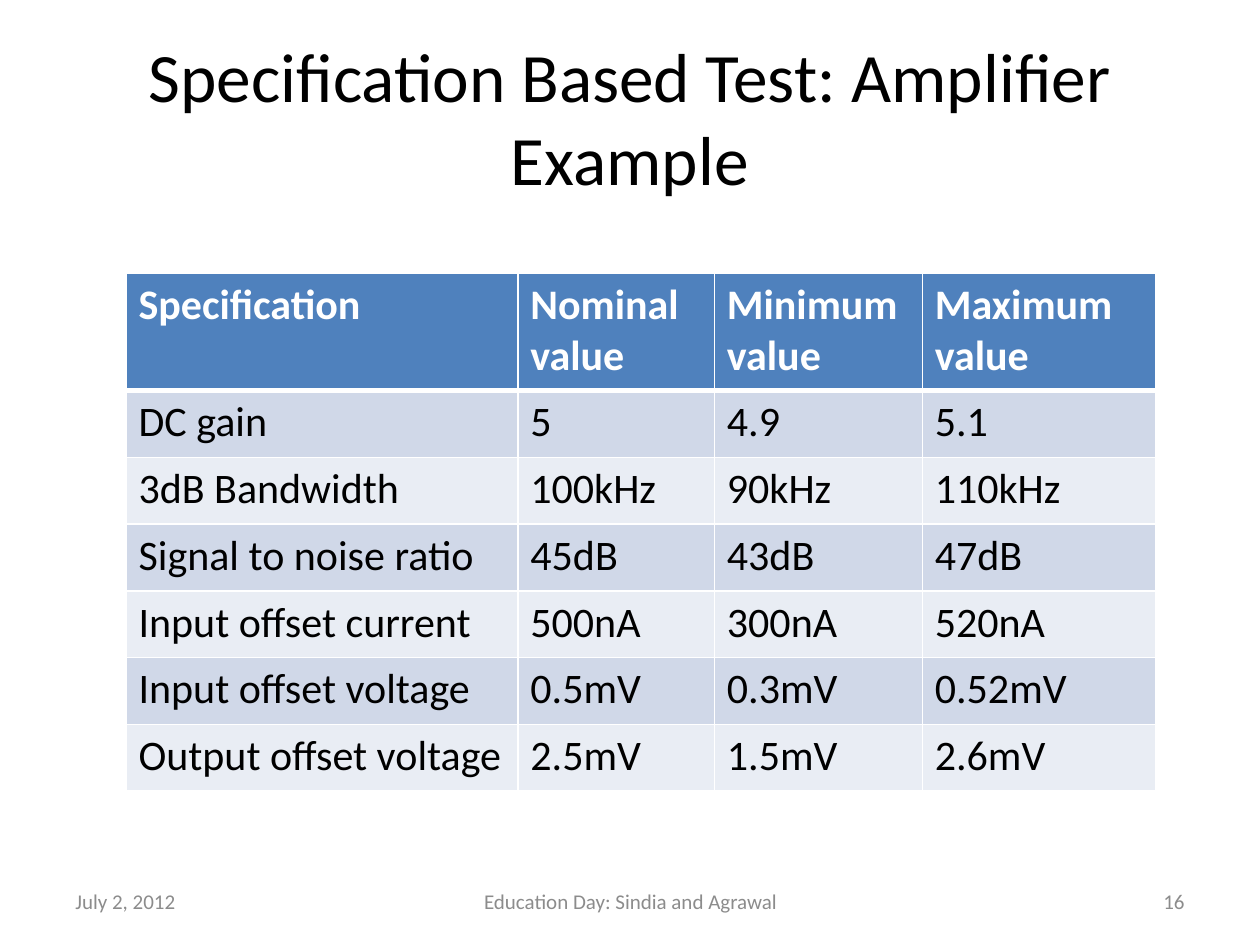
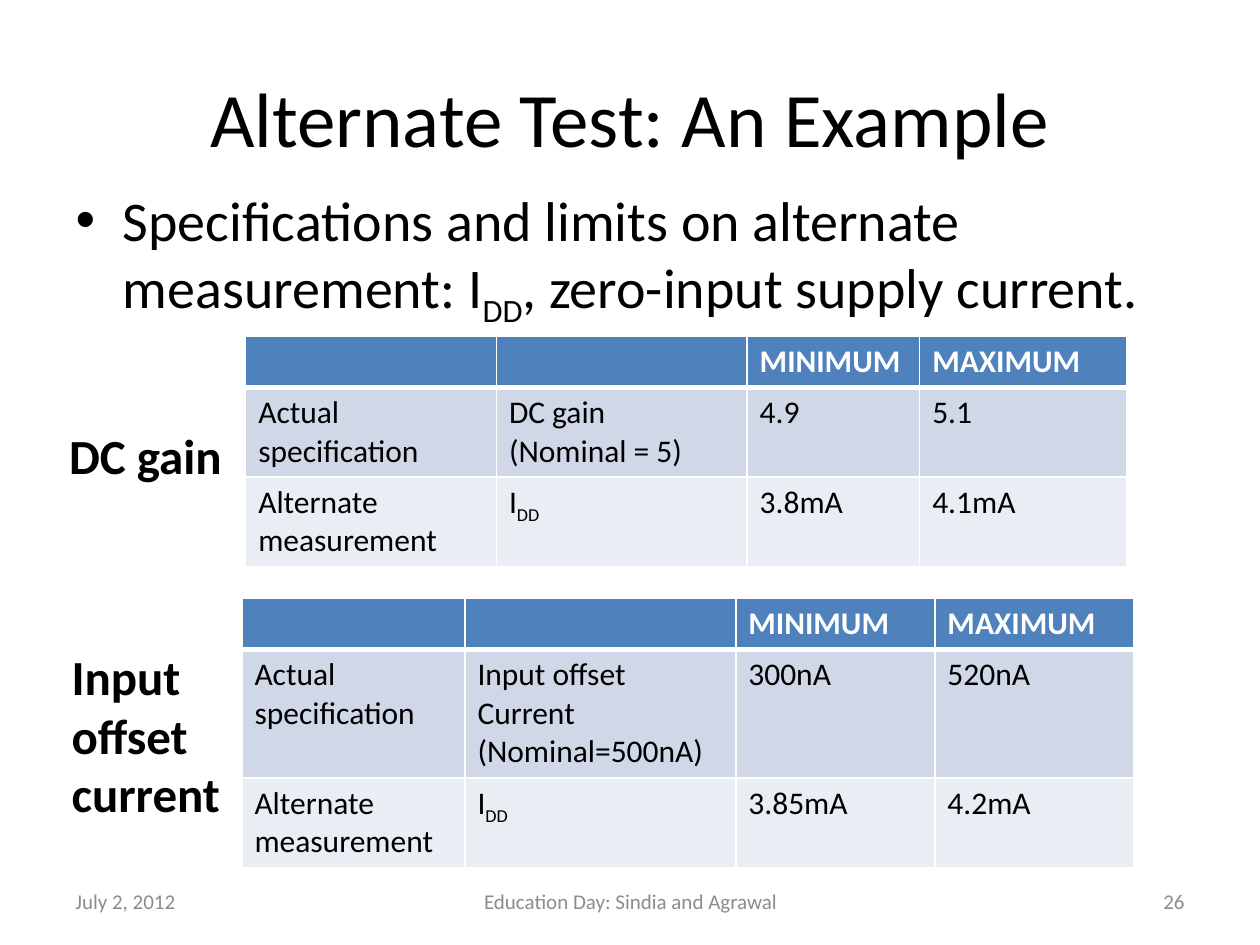
from lxml import etree
from pptx import Presentation
from pptx.dml.color import RGBColor
from pptx.enum import text
from pptx.oxml.ns import qn
from pptx.util import Inches, Pt

FONT = "Calibri"
COLORS = {
    "ink": "000000",
    "paper": "FFFFFF",
    "footer": "8C8C8C",
    "header": "4F81BD",
    "bands": ("D0D8E8", "E9EDF4"),
}
LEFT, CENTER, RIGHT = text.PP_ALIGN.LEFT, text.PP_ALIGN.CENTER, text.PP_ALIGN.RIGHT

SLIDE_SIZE = (10, 7.5)
TITLE_BOX = (0.5, 0.3, 9, 1.25)
BODY_BOX = (0.5, 1.42, 9, 4.95)
FOOTER_TOP, FOOTER_HEIGHT = 6.95, 0.4
DATE = "July 2, 2012"
EVENT = "Education Day: Sindia and Agrawal"

# Text between two tildes is a subscript; a line break starts a paragraph.
LIMITS_HEADER = ("", "", "MINIMUM", "MAXIMUM")
SLIDES = [
    {
        "layout": "Title Only",
        "title": "Specification Based Test: Amplifier Example",
        "title_size": 39.6,
        "number": 16,
        "tables": [{
            "at": (1, 2.17),
            "size": 24,
            "columns": (3.11, 1.56, 1.65, 1.85),
            "heights": (0.93,) + (0.53,) * 6,
            "rows": [
                ("Specification", "Nominal value", "Minimum\nvalue", "Maximum\nvalue"),
                ("DC gain", "5", "4.9", "5.1"),
                ("3dB Bandwidth", "100kHz", "90kHz", "110kHz"),
                ("Signal to noise ratio", "45dB", "43dB", "47dB"),
                ("Input offset current", "500nA", "300nA", "520nA"),
                ("Input offset voltage", "0.5mV", "0.3mV", "0.52mV"),
                ("Output offset voltage", "2.5mV", "1.5mV", "2.6mV"),
            ],
        }],
        "labels": [],
    },
    {
        "layout": "Title and Content",
        "title": "Alternate Test: An Example",
        "title_size": 44,
        "body": "Specifications and limits on alternate measurement: "
                "I~DD~, zero-input supply current.",
        "number": 26,
        "tables": [
            {
                "at": (1.95, 2.67),
                "size": 18,
                "columns": (1.99, 1.99, 1.37, 1.64),
                "heights": (0.4, 0.7, 0.7),
                "rows": [
                    LIMITS_HEADER,
                    ("Actual specification", "DC gain\n(Nominal = 5)", "4.9", "5.1"),
                    ("Alternate measurement", "I~DD~", "3.8mA", "4.1mA"),
                ],
            },
            {
                "at": (1.92, 4.75),
                "size": 18,
                "columns": (1.77, 2.15, 1.58, 1.58),
                "heights": (0.4, 1.02, 0.7),
                "rows": [
                    LIMITS_HEADER,
                    ("Actual specification", "Input offset Current\n(Nominal=500nA)",
                     "300nA", "520nA"),
                    ("Alternate measurement", "I~DD~", "3.85mA", "4.2mA"),
                ],
            },
        ],
        "labels": [
            ("DC gain", (0.45, 3.33, 1.43, 0.57)),
            ("Input\noffset\ncurrent", (0.47, 5.08, 1.39, 1.51)),
        ],
    },
]


def write(frame, content, size, color, bold=False, align=LEFT):
    """Fill a text frame, one paragraph a line, with ~subscripts~."""
    for index, line in enumerate(content.split("\n")):
        paragraph = frame.add_paragraph() if index else frame.paragraphs[0]
        paragraph.alignment = align
        for position, part in enumerate(line.split("~")):
            if not part:
                continue
            run = paragraph.add_run()
            run.text = part
            run.font.name = FONT
            run.font.size = Pt(size)
            run.font.bold = bold
            run.font.color.rgb = RGBColor.from_string(color)
            if position % 2:
                run._r.get_or_add_rPr().set("baseline", "-25000")


def fill_placeholder(shape, box, content, size, align):
    shape.left, shape.top, shape.width, shape.height = map(Inches, box)
    shape.text_frame.auto_size = text.MSO_AUTO_SIZE.NONE
    write(shape.text_frame, content, size, COLORS["ink"], align=align)


def add_text(slide, box, content, size, color, wrap=True, anchor=text.MSO_ANCHOR.TOP,
             **style):
    frame = slide.shapes.add_textbox(*map(Inches, box)).text_frame
    frame.word_wrap = wrap
    frame.vertical_anchor = anchor
    write(frame, content, size, color, **style)


def set_borders(cell, top, bottom):
    """Draw the four cell edges; top and bottom widths are in points."""
    properties = cell._tc.get_or_add_tcPr()
    widths = {"a:lnL": 1, "a:lnR": 1, "a:lnT": top, "a:lnB": bottom}
    for index, (tag, width) in enumerate(widths.items()):
        line = etree.Element(qn(tag), w=str(Pt(width)))
        fill = etree.SubElement(line, qn("a:solidFill"))
        etree.SubElement(fill, qn("a:srgbClr"), val=COLORS["paper"])
        properties.insert(index, line)


def add_table(slide, data):
    columns, heights = data["columns"], data["heights"]
    table = slide.shapes.add_table(
        len(heights), len(columns), *map(Inches, data["at"]),
        Inches(sum(columns)), Inches(sum(heights))).table
    table.horz_banding = False
    for column, width in zip(table.columns, columns):
        column.width = Inches(width)
    for index, values in enumerate(data["rows"]):
        table.rows[index].height = Inches(heights[index])
        header = index == 0
        fill = COLORS["header"] if header else COLORS["bands"][(index - 1) % 2]
        ink = COLORS["paper"] if header else COLORS["ink"]
        for cell, value in zip(table.rows[index].cells, values):
            cell.fill.solid()
            cell.fill.fore_color.rgb = RGBColor.from_string(fill)
            set_borders(cell, top=3 if index == 1 else 1, bottom=3 if header else 1)
            write(cell.text_frame, value, data["size"], ink, bold=header)


def add_footer(slide, number):
    parts = [(DATE, 0.5, 2.33, LEFT), (EVENT, 3.42, 3.17, CENTER),
             (str(number), 7.17, 2.33, RIGHT)]
    for content, left, width, align in parts:
        add_text(slide, (left, FOOTER_TOP, width, FOOTER_HEIGHT), content, 12,
                 COLORS["footer"], anchor=text.MSO_ANCHOR.MIDDLE, align=align)


def add_slide(presentation, data):
    layout = presentation.slide_layouts.get_by_name(data["layout"])
    slide = presentation.slides.add_slide(layout)
    fill_placeholder(slide.shapes.title, TITLE_BOX, data["title"],
                     data["title_size"], CENTER)
    if "body" in data:
        fill_placeholder(slide.placeholders[1], BODY_BOX, data["body"], 32, LEFT)
    for table in data["tables"]:
        add_table(slide, table)
    for label, box in data["labels"]:
        add_text(slide, box, label, 28, COLORS["ink"], wrap=False, bold=True)
    add_footer(slide, data["number"])


def main():
    presentation = Presentation()
    presentation.slide_width, presentation.slide_height = map(Inches, SLIDE_SIZE)
    for data in SLIDES:
        add_slide(presentation, data)
    presentation.save("out.pptx")


if __name__ == "__main__":
    main()
